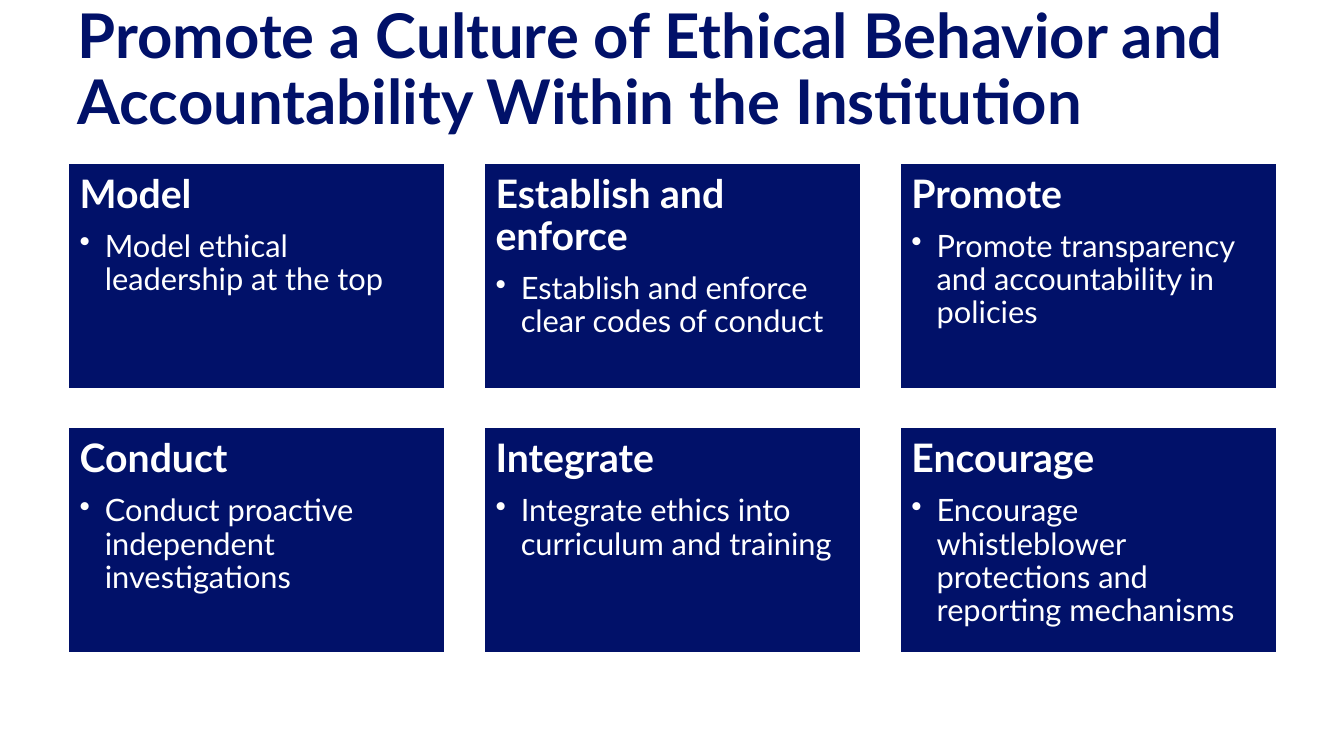
from dataclasses import dataclass
from pptx import Presentation
from pptx.dml.color import RGBColor
from pptx.enum import shapes, text
from pptx.oxml import ns
from pptx.util import Inches, Pt
from lxml import etree


@dataclass
class Theme:
    navy = RGBColor.from_string("011169")
    white = RGBColor.from_string("FFFFFF")
    face = "Lato"
    title = Pt(44)
    head = Pt(28)
    body = Pt(22)


def style(para, size, color, bold):
    para.line_spacing = 0.9
    font = para.font
    font.name, font.size, font.bold = Theme.face, size, bold
    font.color.rgb = color


# Slide
deck = Presentation()
deck.slide_width, deck.slide_height = Inches(13.33), Inches(7.5)
slide = deck.slides.add_slide(deck.slide_layouts[5])

# Title
left, width = 0.67, 12
title = slide.shapes.title
title.left, title.top = Inches(left), Inches(0.21)
title.width, title.height = Inches(width), Inches(1)
frame = title.text_frame
frame.text = "Promote a Culture of Ethical Behavior and Accountability Within the Institution"
frame.word_wrap = True
frame.auto_size = text.MSO_AUTO_SIZE.NONE
frame.vertical_anchor = text.MSO_ANCHOR.MIDDLE
frame.paragraphs[0].alignment = text.PP_ALIGN.LEFT
style(frame.paragraphs[0], Theme.title, Theme.navy, True)

# Cards in a grid of three columns
cards = [
    ("Model", "Model ethical leadership at the top"),
    ("Establish and enforce", "Establish and enforce clear codes of conduct"),
    ("Promote", "Promote transparency and accountability in policies"),
    ("Conduct", "Conduct proactive independent investigations"),
    ("Integrate", "Integrate ethics into curriculum and training"),
    ("Encourage", "Encourage whistleblower protections and reporting mechanisms"),
]
cols, top, wide, high = 3, 1.61, 3.75, 2.25
gap = (width - cols * wide) / (cols - 1)

for i, (head, body) in enumerate(cards):
    row, col = divmod(i, cols)
    card = slide.shapes.add_shape(
        shapes.MSO_SHAPE.RECTANGLE,
        Inches(left + col * (wide + gap)), Inches(top + row * (high + gap)),
        Inches(wide), Inches(high))
    card.shadow.inherit = False
    card.fill.solid()
    card.fill.fore_color.rgb = Theme.navy
    card.line.color.rgb = Theme.white
    card.line.width = Pt(2)

    frame = card.text_frame
    frame.word_wrap = True
    frame.vertical_anchor = text.MSO_ANCHOR.TOP
    frame.margin_left = frame.margin_right = Inches(0.12)
    frame.margin_top = frame.margin_bottom = Inches(0.12)

    # Heading
    lead = frame.paragraphs[0]
    lead.text = head
    lead.alignment = text.PP_ALIGN.LEFT
    lead.space_after = Pt(10)
    style(lead, Theme.head, Theme.white, True)

    # Bullet
    item = frame.add_paragraph()
    item.text = body
    item.level = 1
    item.alignment = text.PP_ALIGN.LEFT
    props = item._p.get_or_add_pPr()
    props.set("marL", str(Inches(0.25)))
    props.set("indent", str(-Inches(0.25)))
    etree.SubElement(props, ns.qn("a:buChar"), char="•")
    style(item, Theme.body, Theme.white, False)

deck.save("out.pptx")
